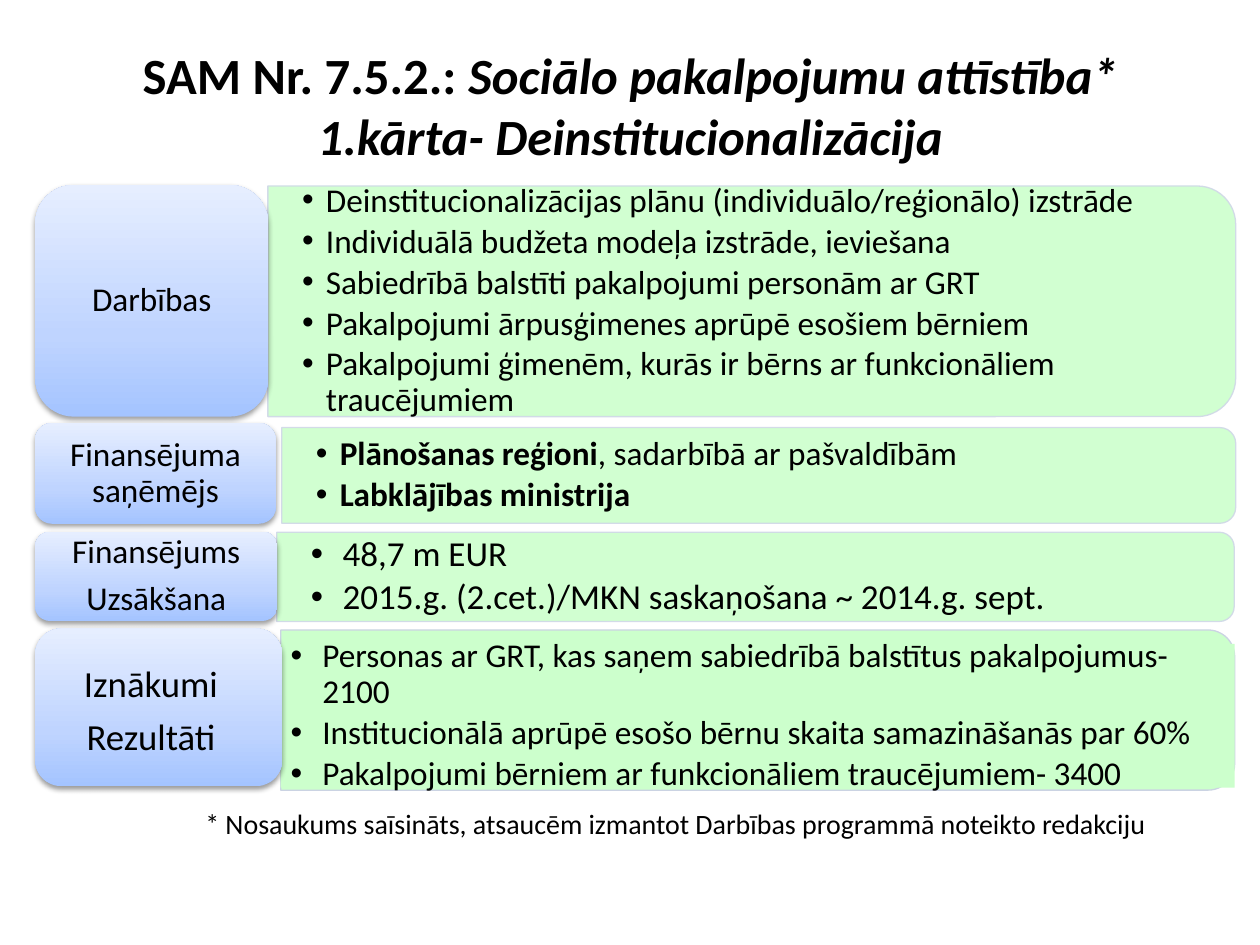
from lxml import etree
from pptx import Presentation
from pptx import util as u
from pptx.dml.color import RGBColor
from pptx.enum import shapes, text
from pptx.oxml import parse_xml
from pptx.oxml.ns import nsdecls, qn

COLORS = {"ink": "000000", "panel": "CCFFCC", "line": "D0D8E8", "result_line": "CBD3E3",
          "low": "A4C4FF", "mid": "BFD4FF", "high": "E6EEFF"}
CORNER_INSET = 0.0488

ROWS = [
    dict(label=(0.71, 3.73, 4.7, 4.67), panel=(5.4, 3.75, 19.51, 4.65),
         titles=["Darbības"],
         items=[[("Deinstitucionalizācijas plānu (individuālo/reģionālo) izstrāde", False)],
                [("Individuālā budžeta modeļa izstrāde, ieviešana", False)],
                [("Sabiedrībā balstīti pakalpojumi personām ar GRT", False)],
                [("Pakalpojumi ārpusģimenes aprūpē esošiem bērniem", False)],
                [("Pakalpojumi ģimenēm, kurās ir bērns ar funkcionāliem traucējumiem", False)]]),
    dict(label=(0.71, 8.53, 4.85, 2.03), panel=(5.68, 8.62, 19.23, 1.93),
         titles=["Finansējuma saņēmējs"],
         items=[[("Plānošanas reģioni", True), (", sadarbībā ar pašvaldībām", False)],
                [("Labklājības ministrija", True)]]),
    dict(label=(0.71, 10.72, 4.88, 1.8), panel=(5.58, 10.73, 19.3, 1.8),
         titles=["Finansējums", "Uzsākšana"], size=20, indent=0.64,
         items=[[("48,7 m EUR", False)],
                [("2015.g. (2.cet.)/MKN saskaņošana ~ 2014.g. sept.", False)]]),
    dict(label=(0.71, 12.67, 4.98, 3.18), panel=(5.66, 12.7, 19.23, 3.23),
         titles=["Iznākumi", "Rezultāti"], indent=0.64, label_size=21,
         title_box=(0.81, 12.83, 4.47, 3.05), item_box=(5.66, 12.98, 19.23, 2.9),
         items=[[("Personas ar GRT, kas saņem sabiedrībā balstītus pakalpojumus- 2100", False)],
                [("Institucionālā aprūpē esošo bērnu skaita samazināšanās par 60%", False)],
                [("Pakalpojumi bērniem ar funkcionāliem traucējumiem- 3400", False)]]),
]


def cm(box):
    return [u.Cm(v) for v in box]


def color(name):
    return RGBColor.from_string(COLORS[name])


def add_run(p, words, size, bold=False, italic=False):
    r = p.add_run()
    r.text = words
    r.font.name, r.font.size = "Calibri", u.Pt(size)
    r.font.bold, r.font.italic = bold, italic
    r.font.color.rgb = color("ink")


def write(s, paragraphs, size, align=text.PP_ALIGN.LEFT, anchor=text.MSO_ANCHOR.MIDDLE,
          inset=(0.25, 0.13), spacing=None, after=0, indent=0):
    tf = s.text_frame
    tf.word_wrap, tf.vertical_anchor = True, anchor
    tf.margin_left = tf.margin_right = u.Cm(inset[0])
    tf.margin_top = tf.margin_bottom = u.Cm(inset[1])
    for i, runs in enumerate(paragraphs):
        p = tf.add_paragraph() if i else tf.paragraphs[0]
        if indent:
            p_pr = p._p.get_or_add_pPr()
            p_pr.set("marL", str(u.Cm(indent)))
            p_pr.set("indent", str(-u.Cm(indent)))
            etree.SubElement(p_pr, qn("a:buFont"), typeface="Arial")
            etree.SubElement(p_pr, qn("a:buChar"), char="•")
        p.alignment, p.line_spacing = align, spacing
        p.space_after = u.Pt(size * after)
        for words, bold in runs:
            add_run(p, words, size, bold)


def add_title(slide, box):
    s = slide.shapes.title
    s.left, s.top, s.width, s.height = cm(box)
    tf = s.text_frame
    tf.auto_size, tf.vertical_anchor = text.MSO_AUTO_SIZE.NONE, text.MSO_ANCHOR.MIDDLE
    p = tf.paragraphs[0]
    p.alignment = text.PP_ALIGN.CENTER
    add_run(p, "SAM Nr. 7.5.2.: ", 29, bold=True)
    add_run(p, "Sociālo pakalpojumu attīstība*", 29, bold=True, italic=True)
    p.add_line_break()
    add_run(p, "1.kārta- Deinstitucionalizācija", 29, bold=True, italic=True)


def add_panel(slide, box, items, size=19, indent=0.48, item_box=None):
    x, y, w, h = box
    turned = (x + (w - h) / 2, y + (h - w) / 2, h, w)
    s = slide.shapes.add_shape(shapes.MSO_SHAPE.ROUND_2_SAME_RECTANGLE, *cm(turned))
    s.rotation = 90
    s.shadow.inherit = False
    s.fill.solid()
    s.fill.fore_color.rgb = color("panel")
    s.line.color.rgb = color("result_line" if item_box else "line")
    s.line.width = u.Pt(0.75)
    if item_box:
        body = slide.shapes.add_shape(shapes.MSO_SHAPE.RECTANGLE, *cm(item_box))
        body.shadow.inherit = False
        body.fill.solid()
        body.fill.fore_color.rgb = color("panel")
        body.line.fill.background()
    else:
        for clr in s._element.spPr.iter(qn("a:srgbClr")):
            etree.SubElement(clr, qn("a:alpha"), val="90000")
        d = h * CORNER_INSET
        body = slide.shapes.add_textbox(*cm((x, y + d, w - d, h - 2 * d)))
    write(body, items, size, inset=(0.2, 0.1) if item_box else (0.69, 0.36),
          spacing=0.9, after=0.15, indent=indent)


def add_label(slide, box, titles, size=19, title_box=None):
    s = slide.shapes.add_shape(shapes.MSO_SHAPE.ROUNDED_RECTANGLE, *cm(box))
    s.line.fill.background()
    stops = "".join(f'<a:gs pos="{pos}"><a:srgbClr val="{COLORS[name]}"/></a:gs>'
                    for pos, name in ((0, "low"), (35000, "mid"), (100000, "high")))
    sp_pr = s._element.spPr
    sp_pr.find(qn("a:ln")).addprevious(parse_xml(
        f'<a:gradFill {nsdecls("a")} rotWithShape="1"><a:gsLst>{stops}</a:gsLst>'
        '<a:lin ang="16200000" scaled="0"/></a:gradFill>'))
    sp_pr.append(parse_xml(
        f'<a:effectLst {nsdecls("a")}><a:outerShdw blurRad="{u.Pt(3.1)}" dist="{u.Pt(1.6)}" '
        f'dir="5400000" rotWithShape="0"><a:srgbClr val="{COLORS["ink"]}">'
        '<a:alpha val="38000"/></a:srgbClr></a:outerShdw></a:effectLst>'))
    x, y, w, h = box
    d = h * CORNER_INSET
    place = title_box or (x + d, y + d, w - 2 * d, h - 2 * d)
    write(slide.shapes.add_textbox(*cm(place)), [[(t, False)] for t in titles], size,
          align=text.PP_ALIGN.CENTER, inset=(0.25, 0.13) if title_box else (0.2, 0.1),
          spacing=0.9, after=0.35)


def add_footnote(slide, box):
    note = "* Nosaukums saīsināts, atsaucēm izmantot Darbības programmā noteikto redakciju"
    write(slide.shapes.add_textbox(*cm(box)), [[(note, False)]], 16, anchor=text.MSO_ANCHOR.TOP)


def main():
    prs = Presentation()
    prs.slide_width, prs.slide_height = cm((25.4, 19.05))
    slide = prs.slides.add_slide(prs.slide_layouts[5])
    add_title(slide, (0.79, 0.53, 23.85, 3.18))
    for row in ROWS:
        add_panel(slide, row["panel"], row["items"], row.get("size", 19),
                  row.get("indent", 0.48), row.get("item_box"))
        add_label(slide, row["label"], row["titles"], row.get("label_size", 19),
                  row.get("title_box"))
    add_footnote(slide, (3.89, 16.13, 21.21, 0.94))
    prs.save("out.pptx")


if __name__ == "__main__":
    main()
